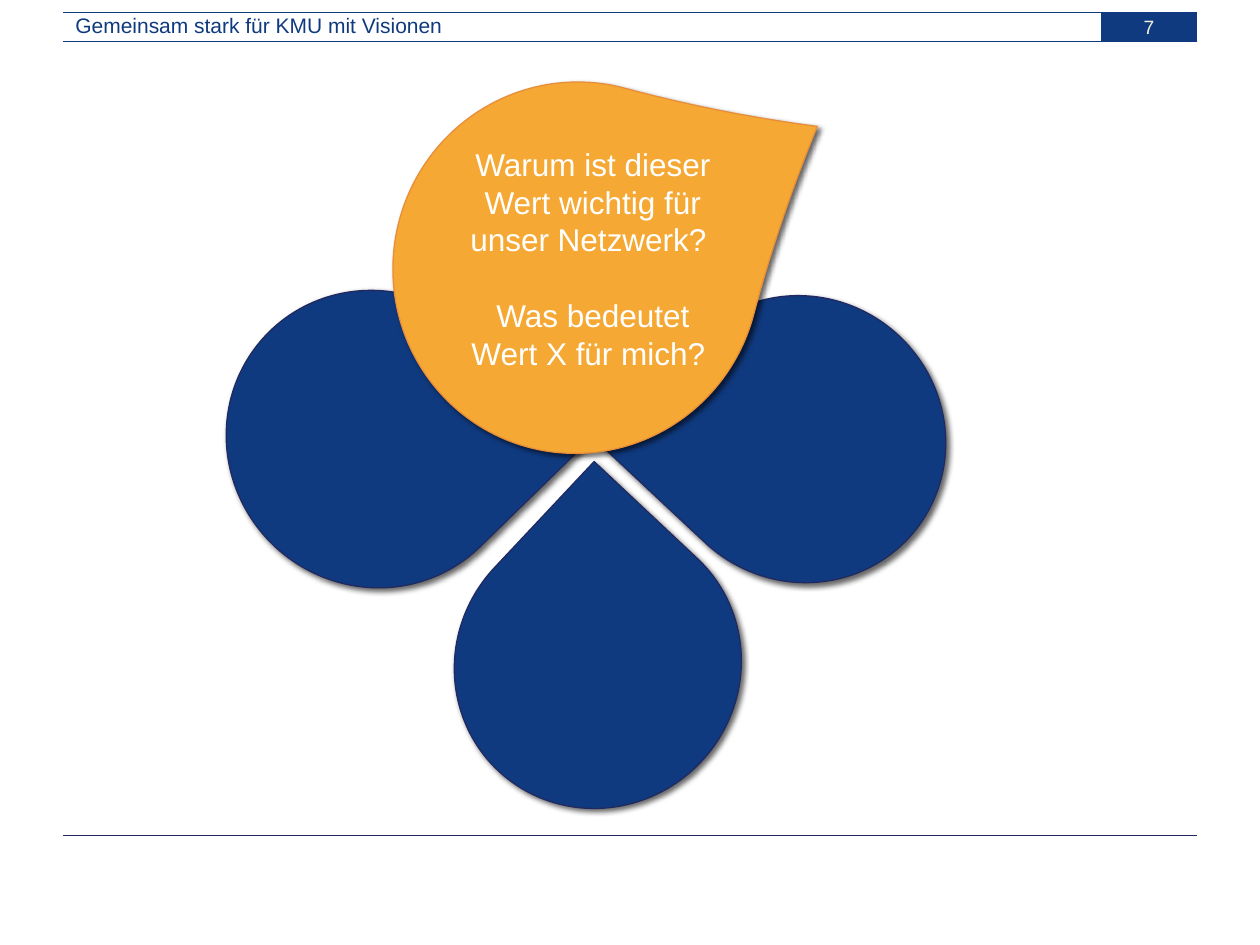
from pptx import Presentation
from pptx.dml.color import RGBColor
from pptx.enum.shapes import MSO_CONNECTOR as CONN, MSO_SHAPE as SHAPE
from pptx.enum.text import MSO_ANCHOR as ANCHOR, PP_ALIGN as ALIGN
from pptx.oxml import parse_xml
from pptx.oxml.ns import nsdecls
from pptx.util import Inches, Pt

COLORS = {
    "blue": "103A7F",
    "navy": "202A61",
    "orange": "F5A934",
    "rust": "E98E38",
    "cream": "F3F2DC",
    "white": "FFFFFF",
}
SHADOW = (
    f'<a:effectLst {nsdecls("a")}>'
    '<a:outerShdw blurRad="38100" dist="25400" dir="2700000" rotWithShape="0">'
    '<a:srgbClr val="000000"><a:alpha val="60000"/></a:srgbClr>'
    "</a:outerShdw></a:effectLst>"
)


def rgb(name):
    return RGBColor.from_string(COLORS[name])


def add_rule(s, y, color):
    line = s.shapes.add_connector(
        CONN.STRAIGHT, Inches(0.5), Inches(y), Inches(9.5), Inches(y))
    line.line.color.rgb = rgb(color)
    line.line.width = Pt(0.5)
    line._element.spPr.append(parse_xml(f'<a:effectLst {nsdecls("a")}/>'))


def write(sp, paragraphs, size, color, align=ALIGN.LEFT, gap=0):
    """Fill a shape with paragraphs, gap points apart."""
    tf = sp.text_frame
    tf.word_wrap = True
    for i, text in enumerate(paragraphs):
        p = tf.add_paragraph() if i else tf.paragraphs[0]
        p.alignment = align
        if i:
            p.space_before = Pt(gap)
        r = p.add_run()
        r.text = text
        r.font.color.rgb = rgb(color)
        for name, value in {"name": "Arial", "size": Pt(size)}.items():
            setattr(r.font, name, value)


def add_text(s, box, paragraphs, size, color, **layout):
    sp = s.shapes.add_textbox(*map(Inches, box))
    write(sp, paragraphs, size, color, **layout)


def add_page_number(s, box, number):
    sp = s.shapes.add_shape(SHAPE.RECTANGLE, *map(Inches, box))
    sp.shadow.inherit = False
    sp.fill.solid()
    sp.fill.fore_color.rgb = rgb("blue")
    sp.line.fill.background()
    sp.text_frame.vertical_anchor = ANCHOR.MIDDLE
    write(sp, [number], 11, "cream", align=ALIGN.CENTER)


def add_petal(s, box, rotation, fill="blue", line="navy", tip=1):
    sp = s.shapes.add_shape(SHAPE.TEAR, *map(Inches, box))
    sp.rotation = rotation
    sp.adjustments[0] = tip
    sp.fill.solid()
    sp.fill.fore_color.rgb = rgb(fill)
    sp.line.color.rgb = rgb(line)
    sp.line.width = Pt(0.75)
    sp._element.spPr.append(parse_xml(SHADOW))


def main():
    prs = Presentation()
    prs.slide_width, prs.slide_height = Inches(10), Inches(7.5)
    s = prs.slides.add_slide(prs.slide_layouts[6])

    for y, color in ((0.33, "blue"), (0.1, "blue"), (6.63, "navy")):
        add_rule(s, y, color)
    add_text(s, (0.5, 0.05, 4.3, 0.33),
             ["Gemeinsam stark für KMU mit Visionen"], 12, "blue")
    add_page_number(s, (8.74, 0.1, 0.76, 0.23), "7")

    add_petal(s, (1.78, 2.32, 2.39, 2.33), 45.7)
    add_petal(s, (5.21, 2.36, 2.31, 2.25), 223.1)
    add_petal(s, (3.59, 4.15, 2.31, 2.25), 313.2)
    add_petal(s, (3.12, 0.65, 2.91, 2.95), 15, "orange", "rust", tip=1.07)
    questions = ["Warum ist dieser Wert wichtig für unser Netzwerk? ",
                 "Was bedeutet Wert X für mich? "]
    add_text(s, (3.58, 1.1, 2.25, 1.92), questions, 18, "white",
             align=ALIGN.CENTER, gap=21.5)

    prs.save("out.pptx")


if __name__ == "__main__":
    main()
